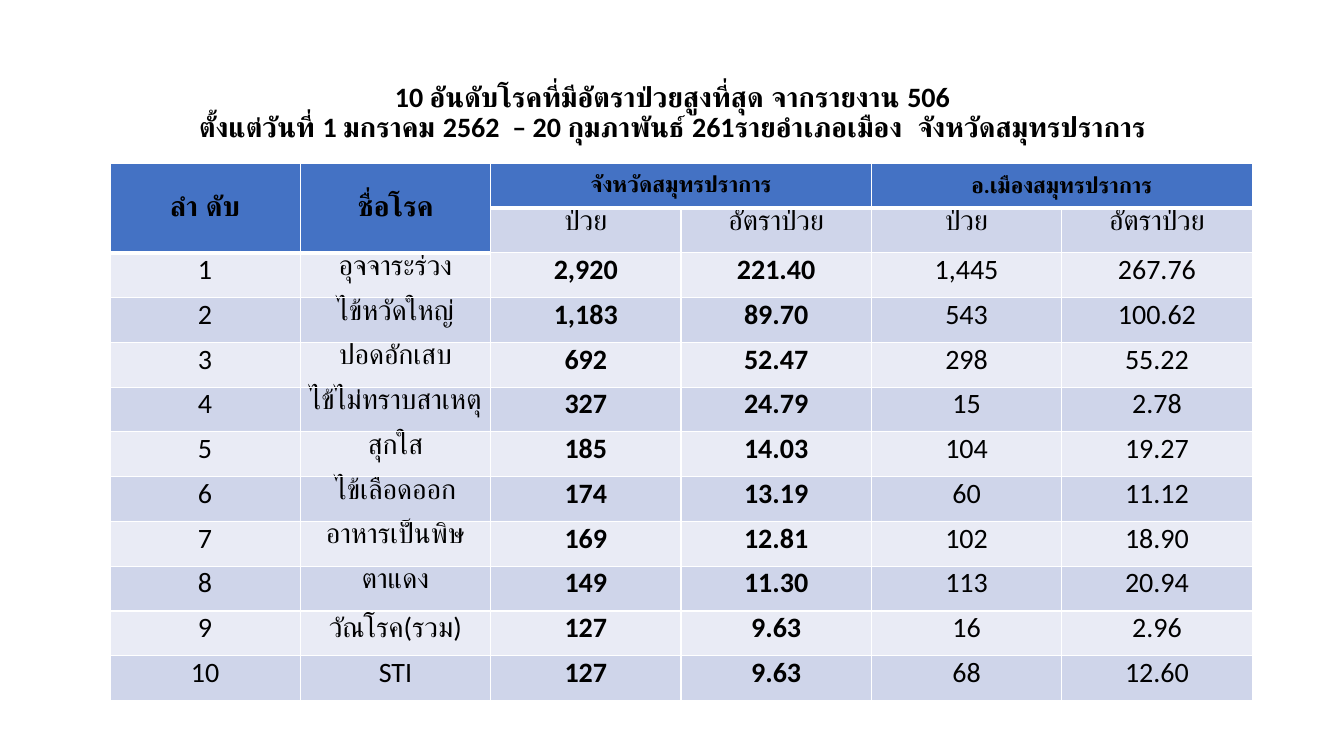
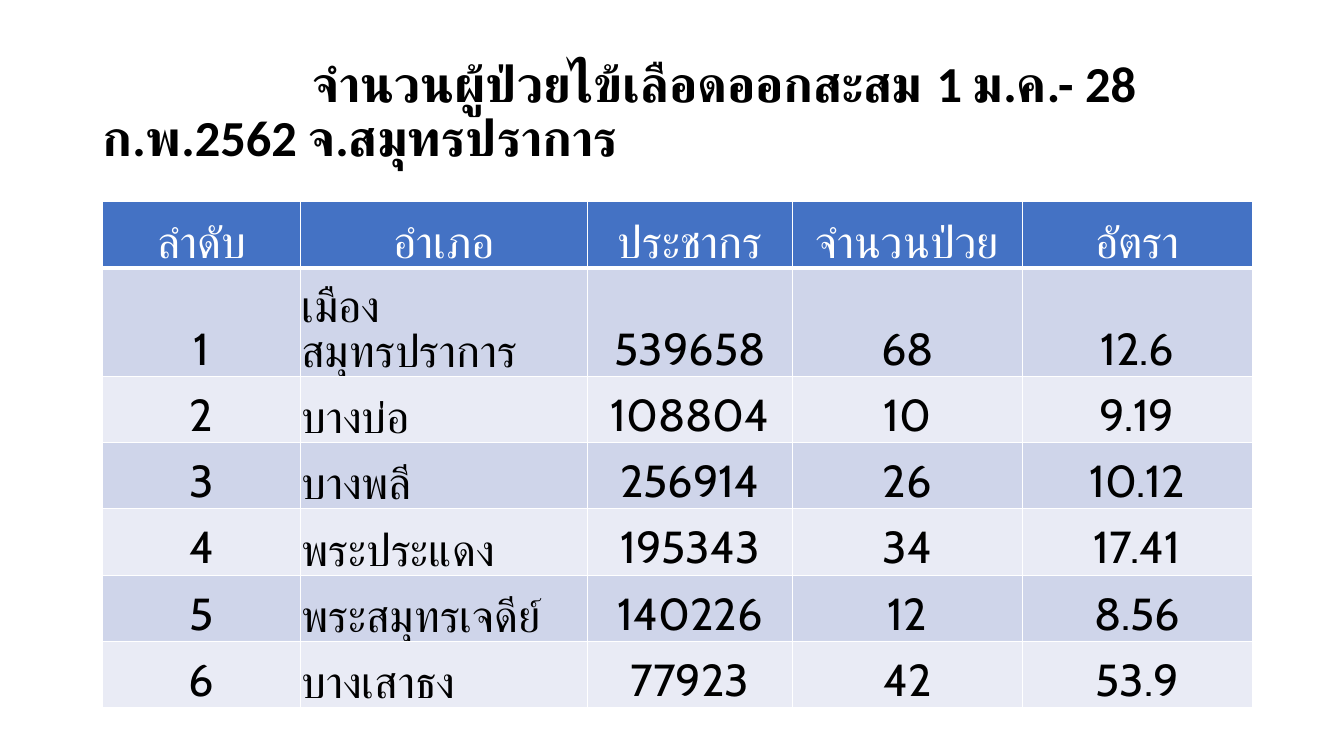
from lxml import etree
from pptx import Presentation
from pptx.dml.color import RGBColor
from pptx.enum.text import MSO_ANCHOR, PP_ALIGN
from pptx.oxml.ns import qn
from pptx.util import Inches, Pt

CENTER, LEFT = PP_ALIGN.CENTER, PP_ALIGN.LEFT
TOP, MIDDLE, BOTTOM = MSO_ANCHOR.TOP, MSO_ANCHOR.MIDDLE, MSO_ANCHOR.BOTTOM
BLACK = RGBColor(0x00, 0x00, 0x00)
WHITE = RGBColor(0xFF, 0xFF, 0xFF)
HEADER_BLUE = RGBColor(0x44, 0x72, 0xC4)
BAND_DARK = RGBColor(0xCF, 0xD5, 0xEA)
BAND_LIGHT = RGBColor(0xE9, 0xEB, 0xF5)
BANDS = (BAND_DARK, BAND_LIGHT)
TITLE_FONT = "Calibri"
DISTRICT_FONT = "Cabin"
TITLE_BOX = (0.92, 0.4, 11.5, 1.45)

DISEASE_TITLE = [
    "10 อันดับโรคที่มีอัตราป่วยสูงที่สุด จากรายงาน 506",
    "ตั้งแต่วันที่ 1 มกราคม 2562  – 20 กุมภาพันธ์ 261รายอำเภอเมือง  จังหวัดสมุทรปราการ",
]
DISEASE_ROWS = [
    ("ลำ ดับ", "ชื่อโรค", "จังหวัดสมุทรปราการ", "", "อ.เมืองสมุทรปราการ", ""),
    ("", "", "ป่วย", "อัตราป่วย", "ป่วย", "อัตราป่วย"),
    ("1", "อุจจาระร่วง", "2,920", "221.40", "1,445", "267.76"),
    ("2", "ไข้หวัดใหญ่", "1,183", "89.70", "543", "100.62"),
    ("3", "ปอดอักเสบ", "692", "52.47", "298", "55.22"),
    ("4", "ไข้ไม่ทราบสาเหตุ", "327", "24.79", "15", "2.78"),
    ("5", "สุกใส", "185", "14.03", "104", "19.27"),
    ("6", "ไข้เลือดออก", "174", "13.19", "60", "11.12"),
    ("7", "อาหารเป็นพิษ", "169", "12.81", "102", "18.90"),
    ("8", "ตาแดง", "149", "11.30", "113", "20.94"),
    ("9", "วัณโรค(รวม)", "127", "9.63", "16", "2.96"),
    ("10", "STI", "127", "9.63", "68", "12.60"),
]
DISEASE_MERGES = [((0, 0), (1, 0)), ((0, 1), (1, 1)), ((0, 2), (0, 3)), ((0, 4), (0, 5))]

DISTRICT_TITLE = ["จำนวนผู้ป่วยไข้เลือดออกสะสม 1 ม.ค.- 28 ก.พ.2562 จ.สมุทรปราการ"]
DISTRICT_ROWS = [
    ("ลำดับ", "อำเภอ", "ประชากร", "จำนวนป่วย", "อัตรา"),
    ("1", "เมืองสมุทรปราการ", "539658", "68", "12.6"),
    ("2", "บางบ่อ", "108804", "10", "9.19"),
    ("3", "บางพลี", "256914", "26", "10.12"),
    ("4", "พระประแดง", "195343", "34", "17.41"),
    ("5", "พระสมุทรเจดีย์", "140226", "12", "8.56"),
    ("6", "บางเสาธง", "77923", "42", "53.9"),
]
DISTRICT_COLUMNS = [1.96, 2.85, 2.03, 2.28, 2.28]


def add_run(paragraph, text, font_name, size, color, bold):
    run = paragraph.add_run()
    run.text = text
    run.font.name = font_name
    run.font.size = Pt(size)
    run.font.color.rgb = color
    run.font.bold = bold


def add_title(slide, lines, size, alignment, indent=0):
    box = slide.shapes.add_textbox(*map(Inches, TITLE_BOX))
    frame = box.text_frame
    frame.word_wrap = True
    frame.vertical_anchor = MIDDLE
    for index, line in enumerate(lines):
        paragraph = frame.add_paragraph() if index else frame.paragraphs[0]
        paragraph.alignment = alignment
        paragraph.line_spacing = 0.9
        if indent:
            paragraph._p.get_or_add_pPr().set("indent", str(Inches(indent)))
        add_run(paragraph, line, TITLE_FONT, size, BLACK, True)


def set_borders(cell, bottom_width):
    properties = cell._tc.get_or_add_tcPr()
    widths = (("a:lnL", 1), ("a:lnR", 1), ("a:lnT", 1), ("a:lnB", bottom_width))
    for index, (tag, width) in enumerate(widths):
        line = etree.Element(qn(tag), w=str(Pt(width)))
        fill = etree.SubElement(line, qn("a:solidFill"))
        etree.SubElement(fill, qn("a:srgbClr"), val=str(WHITE))
        properties.insert(index, line)


def add_table(slide, rows, left, top, columns, row_height, style_of, merges=()):
    shape = slide.shapes.add_table(
        len(rows), len(columns), Inches(left), Inches(top),
        Inches(sum(columns)), Inches(row_height * len(rows)))
    table = shape.table
    for column, width in zip(table.columns, columns):
        column.width = Inches(width)
    for row in table.rows:
        row.height = Inches(row_height)
    for start, end in merges:
        table.cell(*start).merge(table.cell(*end))
    for row_index, row in enumerate(rows):
        for column_index, text in enumerate(row):
            cell = table.cell(row_index, column_index)
            style = style_of(row_index, column_index)
            cell.margin_left, cell.margin_top, cell.margin_right, cell.margin_bottom = map(
                Inches, style["margins"])
            cell.vertical_anchor = style["anchor"]
            cell.fill.solid()
            cell.fill.fore_color.rgb = style["fill"]
            set_borders(cell, 3 if style["fill"] == HEADER_BLUE else 1)
            if text:
                paragraph = cell.text_frame.paragraphs[0]
                paragraph.alignment = style["alignment"]
                add_run(paragraph, text, *style["font"])


def disease_style(row, column):
    header = row == 0 or (row == 1 and column < 2)
    padded = row < 2 or column == 0
    bold = header or (row > 1 and column in (2, 3))
    size = 16 if header and column > 1 else 20
    return {
        "margins": (0.06, 0, 0.06, 0) if padded else (0, 0, 0, 0),
        "anchor": MIDDLE if header else TOP,
        "fill": HEADER_BLUE if header else BANDS[(row + 1) % 2],
        "alignment": CENTER,
        "font": (TITLE_FONT, size, BLACK, bold),
    }


def district_style(row, column):
    header = row == 0
    return {
        "margins": (0.01, 0.01, 0.01, 0),
        "anchor": BOTTOM,
        "fill": HEADER_BLUE if header else BANDS[(row + 1) % 2],
        "alignment": LEFT if column == 1 and not header else CENTER,
        "font": (DISTRICT_FONT, 32, WHITE if header else BLACK, False),
    }


def main():
    presentation = Presentation()
    presentation.slide_width = Inches(13.33)
    presentation.slide_height = Inches(7.5)
    blank = presentation.slide_layouts[6]

    disease_slide = presentation.slides.add_slide(blank)
    add_table(disease_slide, DISEASE_ROWS, 1.09, 1.62, [11.33 / 6] * 6, 5.33 / 12,
              disease_style, DISEASE_MERGES)
    add_title(disease_slide, DISEASE_TITLE, 20, CENTER)

    district_slide = presentation.slides.add_slide(blank)
    add_title(district_slide, DISTRICT_TITLE, 36, LEFT, indent=2.08)
    add_table(district_slide, DISTRICT_ROWS, 1.02, 2, DISTRICT_COLUMNS, 4.6 / 7,
              district_style)

    presentation.save("out.pptx")


if __name__ == "__main__":
    main()
